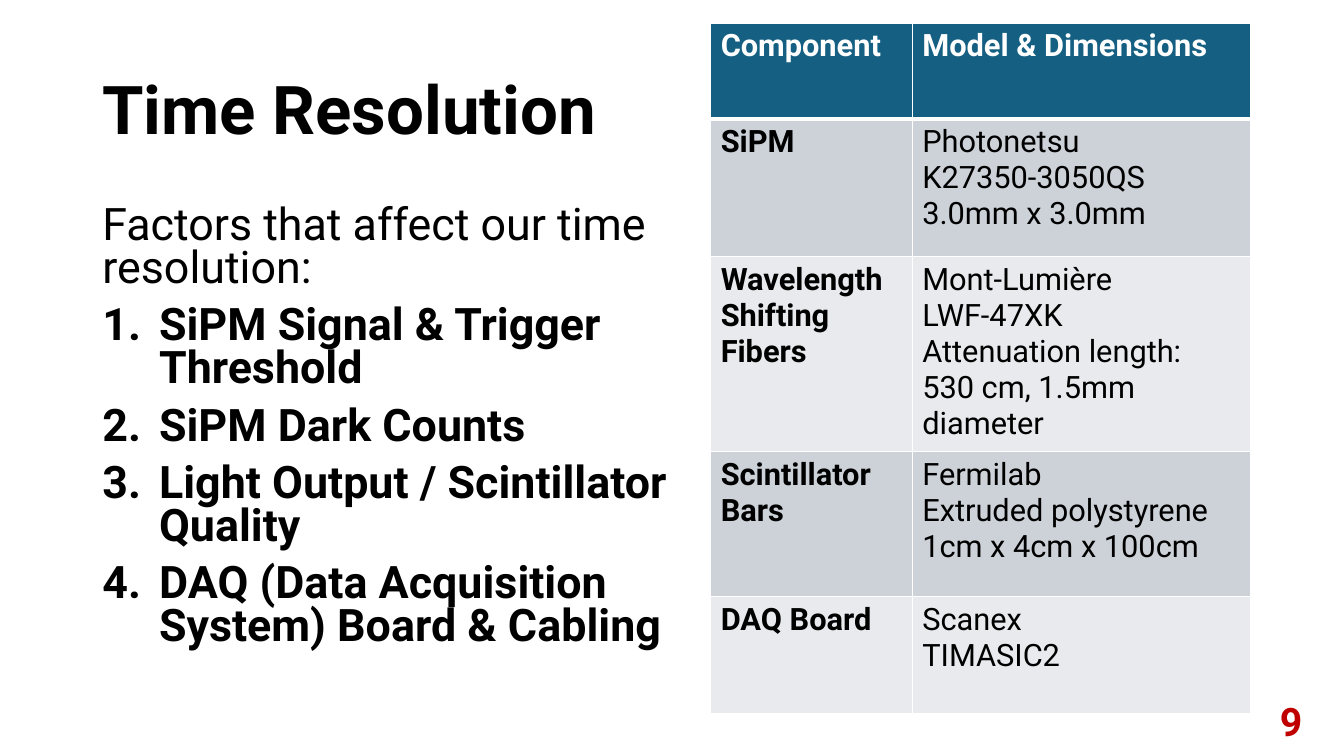
"""Build the time resolution slide with its table of detector components."""
import pptx
import pptx.dml.color
import pptx.enum.text
import pptx.oxml
import pptx.oxml.ns
import pptx.util

Cm = pptx.util.Cm
Pt = pptx.util.Pt
ANCHOR = pptx.enum.text.MSO_ANCHOR
ALIGN = pptx.enum.text.PP_ALIGN
COLORS = {
    "text": "000000",
    "white": "FFFFFF",
    "number": "C00000",
    "header": "156082",
    "dark band": "CCD2D8",
    "light band": "E8EAED",
}


def write(frame, lines, size, color="text", bold=False, align=ALIGN.LEFT,
          spacing=1.0, gap=0, numbered_from=None):
    """Fill a text frame with lines, numbering and bolding those from an index on."""
    frame.word_wrap = True
    for index, line in enumerate(lines):
        para = frame.paragraphs[0] if index == 0 else frame.add_paragraph()
        numbered = numbered_from is not None and index >= numbered_from
        if numbered:
            properties = para._p.get_or_add_pPr()
            properties.set("marL", str(Cm(1.43)))
            properties.set("indent", str(-Cm(1.43)))
            properties.append(pptx.oxml.parse_xml(
                f'<a:buFont {pptx.oxml.ns.nsdecls("a")} typeface="+mj-lt"/>'))
            properties.append(pptx.oxml.parse_xml(
                f'<a:buAutoNum {pptx.oxml.ns.nsdecls("a")} type="arabicPeriod"/>'))
        para.alignment = align
        para.line_spacing = spacing
        para.space_before = Pt(gap if index else 0)
        span = para.add_run()
        span.text = line
        span.font.name = "Roboto"
        span.font.size = Pt(size)
        span.font.bold = bold or numbered
        span.font.color.rgb = pptx.dml.color.RGBColor.from_string(COLORS[color])


def add_borders(cell, top, bottom):
    """Draw white borders around a cell with the given top and bottom widths."""
    properties = cell._tc.get_or_add_tcPr()
    widths = {"lnL": 1, "lnR": 1, "lnT": top, "lnB": bottom}
    for position, (side, width) in enumerate(widths.items()):
        properties.insert(position, pptx.oxml.parse_xml(
            f'<a:{side} {pptx.oxml.ns.nsdecls("a")} w="{Pt(width)}"><a:solidFill>'
            f'<a:srgbClr val="{COLORS["white"]}"/></a:solidFill></a:{side}>'))


deck = pptx.Presentation()
deck.slide_width = Cm(33.87)
deck.slide_height = Cm(19.05)
page = deck.slides.add_slide(deck.slide_layouts[6])

title = page.shapes.add_textbox(Cm(2.33), Cm(1.01), Cm(29.21), Cm(3.68))
title.text_frame.vertical_anchor = ANCHOR.MIDDLE
write(title.text_frame, ["Time Resolution"], size=48, bold=True, spacing=0.9)

factors = [
    "Factors that affect our time resolution:",
    "SiPM Signal & Trigger Threshold",
    "SiPM Dark Counts",
    "Light Output / Scintillator Quality",
    "DAQ (Data Acquisition System) Board & Cabling",
]
body = page.shapes.add_textbox(Cm(2.33), Cm(5.08), Cm(15.6), Cm(12.09))
write(body.text_frame, factors, size=32, spacing=0.8, gap=10, numbered_from=1)

number = page.shapes.add_textbox(Cm(25.45), Cm(17.65), Cm(7.62), Cm(1.01))
number.text_frame.vertical_anchor = ANCHOR.MIDDLE
write(number.text_frame, ["9"], size=28, color="number", bold=True, align=ALIGN.RIGHT)

components = [
    ("Component", ["Model & Dimensions"], 2.41),
    ("SiPM", ["Photonetsu", "K27350-3050QS", "3.0mm x 3.0mm"], 3.48),
    ("Wavelength Shifting Fibers",
     ["Mont-Lumière", "LWF-47XK", "Attenuation length: 530 cm, 1.5mm diameter"], 4.37),
    ("Scintillator Bars",
     ["Fermilab", "Extruded polystyrene", "1cm x 4cm x 100cm"], 3.66),
    ("DAQ Board", ["Scanex", "TIMASIC2"], 2.95),
]
column_widths = [5.08, 8.53]
table = page.shapes.add_table(
    len(components), len(column_widths), Cm(17.91), Cm(0.58),
    Cm(sum(column_widths)), Cm(sum(height for name, model, height in components))).table
for column, width in zip(table.columns, column_widths):
    column.width = Cm(width)
for row, (name, model, height) in enumerate(components):
    table.rows[row].height = Cm(height)
    header = row == 0
    band = "header" if header else "dark band" if row % 2 else "light band"
    for column, lines in enumerate([[name], model]):
        cell = table.cell(row, column)
        cell.fill.solid()
        cell.fill.fore_color.rgb = pptx.dml.color.RGBColor.from_string(COLORS[band])
        add_borders(cell, top=3 if row == 1 else 1, bottom=3 if header else 1)
        write(cell.text_frame, lines, size=22, color="white" if header else "text",
              bold=header or column == 0)

deck.save("out.pptx")
